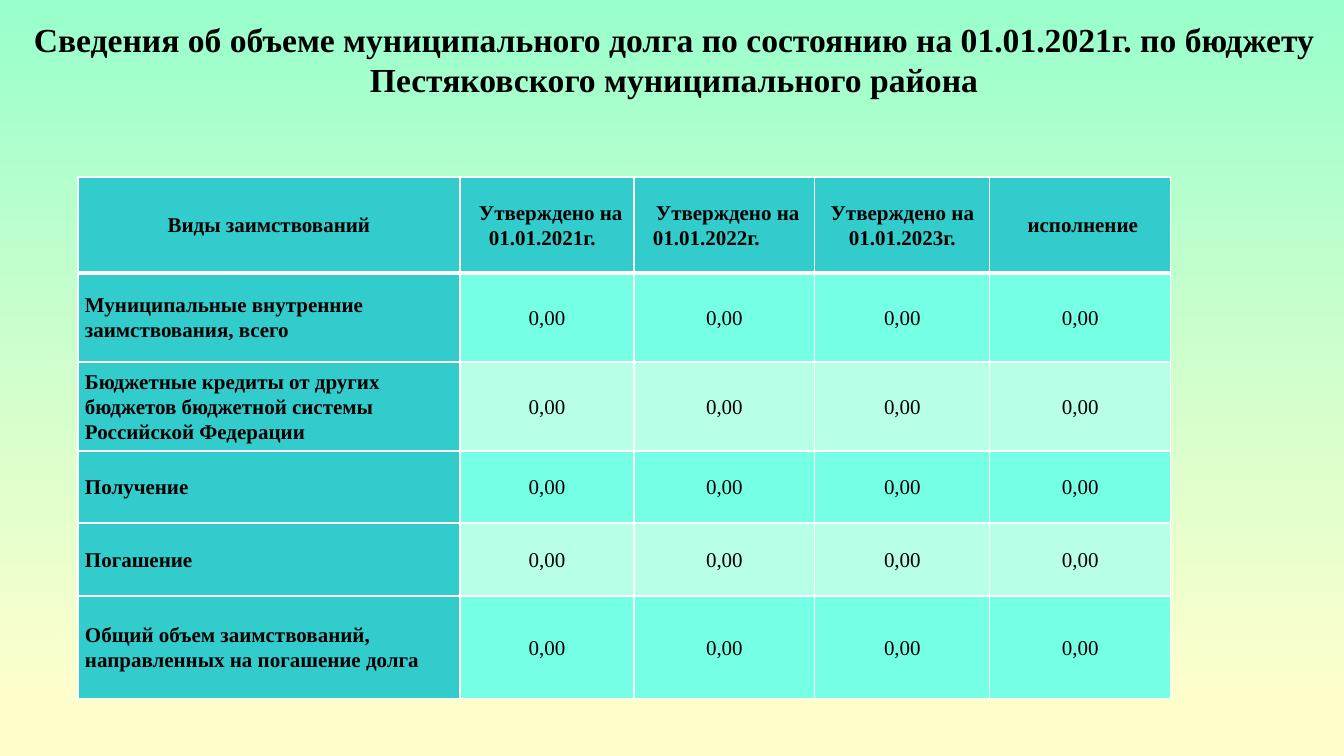
from dataclasses import dataclass
from itertools import accumulate

from lxml import etree
from pptx import Presentation, util as u
from pptx.dml.color import RGBColor as Rgb
from pptx.enum import text
from pptx.oxml import ns

LEFT, MID = text.PP_ALIGN.LEFT, text.PP_ALIGN.CENTER


@dataclass(frozen=True)
class Theme:
    font: str = "Times New Roman"
    ink: str = "000000"
    line: str = "FFFFFF"
    head: str = "33CCCC"
    bands: tuple[str, str] = ("75FFE5", "B7FFE7")
    top: str = "99FFCC"
    base: str = "FFFFCC"
    title: int = 24
    body: int = 15


@dataclass(frozen=True)
class Head:
    label: str
    width: int
    align: text.PP_ALIGN = MID
    inset: int = 7
    margin: int = 0
    indent: int = 0


@dataclass(frozen=True)
class Row:
    label: str
    height: int


THEME = Theme()
HEADS = (
    Head("Виды заимствований", 382),
    Head("Утверждено на 01.01.2021г.", 174, LEFT, 19, 10, -10),
    Head("Утверждено на 01.01.2022г.", 181, LEFT, 19, 0, 3),
    Head("Утверждено на 01.01.2023г.", 175),
    Head("исполнение", 181, inset=12),
)
ROWS = (
    Row("Муниципальные внутренние заимствования, всего", 89),
    Row("Бюджетные кредиты от других бюджетов бюджетной системы Российской Федерации", 89),
    Row("Получение", 72),
    Row("Погашение", 73),
    Row("Общий объем заимствований, направленных на погашение долга", 103),
)
HEAD_H = 96
VALUE = "0,00"


def px(count: int) -> u.Emu:
    return u.Emu(round(count * 914400 / 100.8))


def style(para, size: int, bold: bool, align: text.PP_ALIGN) -> None:
    para.alignment = align
    font = para.font
    font.name, font.size, font.bold = THEME.font, u.Pt(size), bold
    font.color.rgb = Rgb.from_string(THEME.ink)


def border(cell, side: str, width: int) -> None:
    line = etree.SubElement(cell._tc.get_or_add_tcPr(), ns.qn(f"a:ln{side}"), w=str(u.Pt(width)))
    fill = etree.SubElement(line, ns.qn("a:solidFill"))
    etree.SubElement(fill, ns.qn("a:srgbClr"), val=THEME.line)


def write(cell, label: str, fill: str, bold: bool, align: text.PP_ALIGN,
          inset: int = 7, under: int = 1):
    cell.text = label
    cell.vertical_anchor = text.MSO_ANCHOR.MIDDLE
    cell.margin_left, cell.margin_right = px(inset), px(4 if inset > 12 else 7)
    cell.margin_top = cell.margin_bottom = 0
    for side, width in (("L", 1), ("R", 1), ("T", 1), ("B", under)):
        border(cell, side, width)
    cell.fill.solid()
    cell.fill.fore_color.rgb = Rgb.from_string(fill)
    para = cell.text_frame.paragraphs[0]
    para.line_spacing = 1.07
    style(para, THEME.body, bold, align)
    return para


def paint(slide) -> None:
    fill = slide.background.fill
    fill.gradient()
    fill.gradient_angle = 270
    for stop, color, place in zip(fill.gradient_stops, (THEME.top, THEME.base), (0, 0.93)):
        stop.color.rgb = Rgb.from_string(color)
        stop.position = place


def title(slide) -> None:
    frame = slide.shapes.add_textbox(px(4), px(19), px(1340), px(80)).text_frame
    frame.word_wrap = True
    frame.margin_top = frame.margin_bottom = 0
    para = frame.paragraphs[0]
    para.text = ("Сведения об объеме муниципального долга по состоянию на 01.01.2021г. "
                 "по бюджету Пестяковского муниципального района")
    style(para, THEME.title, True, MID)


def debts(slide) -> None:
    wide = sum(head.width for head in HEADS)
    *_, tall = accumulate((row.height for row in ROWS), initial=HEAD_H)
    table = slide.shapes.add_table(len(ROWS) + 1, len(HEADS), px(78), px(177),
                                   px(wide), px(tall)).table
    table.first_col = True
    table.rows[0].height = px(HEAD_H)
    for col, head in enumerate(HEADS):
        table.columns[col].width = px(head.width)
        para = write(table.cell(0, col), head.label, THEME.head, True,
                     head.align, head.inset, 3)
        if head.align == LEFT:
            props = para._p.get_or_add_pPr()
            props.set("marL", str(px(head.margin)))
            props.set("indent", str(px(head.indent)))
    for num, row in enumerate(ROWS, 1):
        table.rows[num].height = px(row.height)
        write(table.cell(num, 0), row.label, THEME.head, True, LEFT)
        for col in range(1, len(HEADS)):
            write(table.cell(num, col), VALUE, THEME.bands[(num - 1) % 2], False, MID)


def main() -> None:
    deck = Presentation()
    deck.slide_width, deck.slide_height = px(1344), px(756)
    slide = deck.slides.add_slide(deck.slide_layouts[6])
    paint(slide)
    title(slide)
    debts(slide)
    deck.save("out.pptx")


if __name__ == "__main__":
    main()
